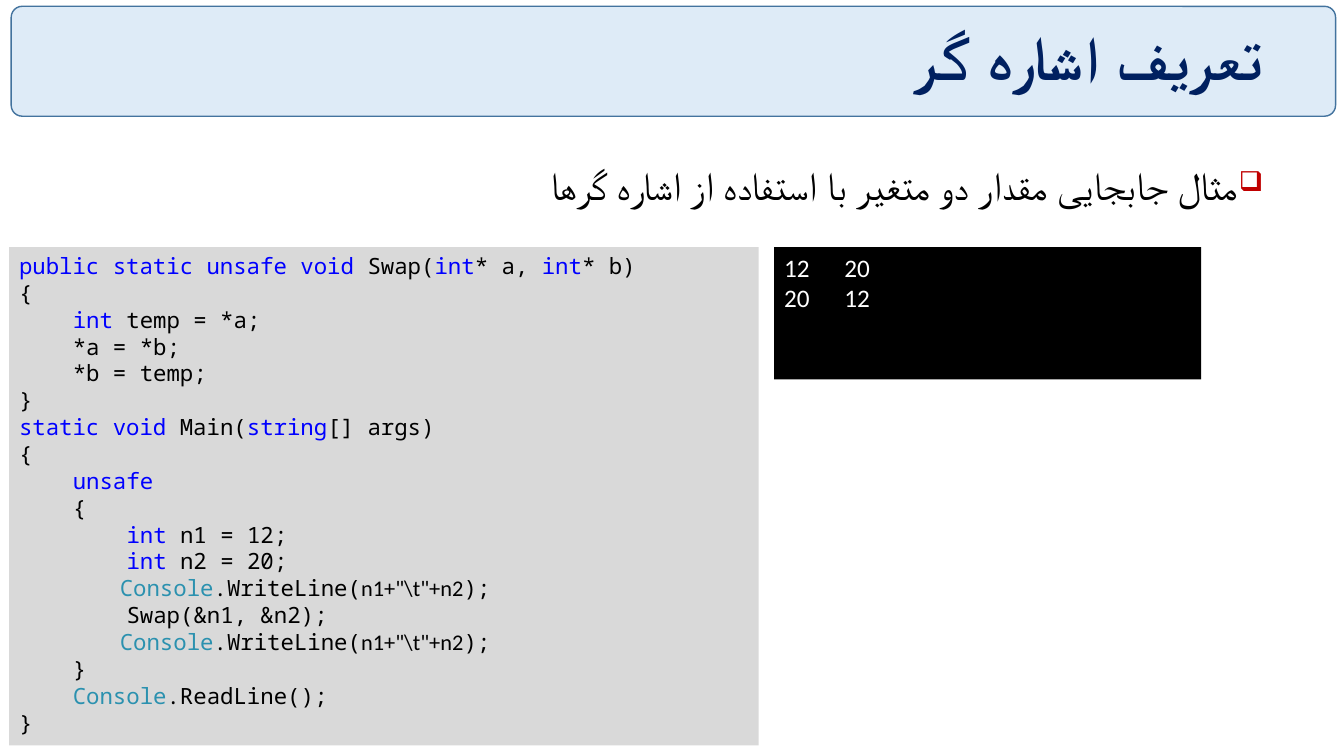
from lxml import etree
from pptx import Presentation
from pptx.dml.color import RGBColor
from pptx.enum.shapes import MSO_SHAPE
from pptx.enum.text import MSO_ANCHOR, MSO_AUTO_SIZE, PP_ALIGN
from pptx.oxml.ns import qn
from pptx.util import Pt

ROUND_RECT = MSO_SHAPE.ROUNDED_RECTANGLE
TOP, MIDDLE = MSO_ANCHOR.TOP, MSO_ANCHOR.MIDDLE
LEFT, RIGHT = PP_ALIGN.LEFT, PP_ALIGN.RIGHT
NO_FIT = MSO_AUTO_SIZE.NONE
TITLE_ONLY = 5

SANS, MONO = "Calibri", "Noto Sans Mono"
BLACK, WHITE, NAVY, RED = "000000", "FFFFFF", "002060", "C00000"
BLUE, TEAL, GREY, PALE, STEEL = "0000FF", "2B91AF", "D9D9D9", "DEEBF7", "43739E"

# Code: indent in points, then runs of text with font and colour
INDENT, TAB = 38.4, 72
PLAIN, KEYWORD, TYPE, ARGS = (MONO, BLACK), (MONO, BLUE), (MONO, TEAL), (SANS, BLACK)
WRITE_LINE = (TAB, [("Console", TYPE), (".WriteLine(", PLAIN),
                    ('n1+"\\t"+n2', ARGS), (");", PLAIN)])
CODE = [
    (0, [("public static unsafe void", KEYWORD), (" Swap(", PLAIN), ("int", KEYWORD),
         ("* a, ", PLAIN), ("int", KEYWORD), ("* b)", PLAIN)]),
    (0, [("{", PLAIN)]),
    (INDENT, [("int", KEYWORD), (" temp = *a;", PLAIN)]),
    (INDENT, [("*a = *b;", PLAIN)]),
    (INDENT, [("*b = temp;", PLAIN)]),
    (0, [("}", PLAIN)]),
    (0, [("static void", KEYWORD), (" Main(", PLAIN), ("string", KEYWORD),
         ("[] args)", PLAIN)]),
    (0, [("{", PLAIN)]),
    (INDENT, [("unsafe", KEYWORD)]),
    (INDENT, [("{", PLAIN)]),
    (2 * INDENT, [("int", KEYWORD), (" n1 = 12;", PLAIN)]),
    (2 * INDENT, [("int", KEYWORD), (" n2 = 20;", PLAIN)]),
    WRITE_LINE,
    (2 * INDENT, [("Swap(&n1, &n2);", PLAIN)]),
    WRITE_LINE,
    (INDENT, [("}", PLAIN)]),
    (INDENT, [("Console", TYPE), (".ReadLine();", PLAIN)]),
    (0, [("}", PLAIN)]),
]


def rgb(value):
    return RGBColor.from_string(value)


class SlideBuilder:
    def __init__(self, prs):
        self.s = prs.slides.add_slide(prs.slide_layouts[TITLE_ONLY])

    def style(self, font, size, color, name=SANS, bold=False):
        font.name, font.size, font.bold = name, Pt(size), bold
        font.color.rgb = rgb(color)

    def frame(self, sp, anchor):
        tf = sp.text_frame
        tf.word_wrap, tf.auto_size, tf.vertical_anchor = True, NO_FIT, anchor
        return tf

    def box(self, x, y, w, h, fill=None):
        sp = self.s.shapes.add_textbox(Pt(x), Pt(y), Pt(w), Pt(h))
        if fill:
            sp.fill.solid()
            sp.fill.fore_color.rgb = rgb(fill)
        return self.frame(sp, TOP)

    def paragraphs(self, tf, count):
        return [tf.paragraphs[0]] + [tf.add_paragraph() for _ in range(count - 1)]

    def line(self, p, text, size, color, align=LEFT, bold=False):
        p.text, p.alignment = text, align
        self.style(p.font, size, color, bold=bold)

    def rtl_line(self, p, text, size, color, spacing, bold=False):
        self.line(p, text, size, color, RIGHT, bold)
        p.line_spacing = spacing
        p._p.pPr.set("rtl", "1")

    def add_property(self, p, tag, **attributes):
        el = etree.Element(qn(tag), **attributes)
        p._p.pPr.find(qn("a:defRPr")).addprevious(el)
        return el

    def bullet(self, p, char, color, percent, indent):
        pPr = p._p.pPr
        pPr.set("marL", str(Pt(indent)))
        pPr.set("indent", str(-Pt(indent)))
        etree.SubElement(self.add_property(p, "a:buClr"), qn("a:srgbClr"), val=color)
        self.add_property(p, "a:buSzPct", val=str(percent * 1000))
        self.add_property(p, "a:buChar", char=char)

    def title(self, text, x, y, w, h):
        sp = self.s.shapes.title
        sp.left, sp.top, sp.width, sp.height = Pt(x), Pt(y), Pt(w), Pt(h)
        tf = self.frame(sp, MIDDLE)
        self.rtl_line(tf.paragraphs[0], text, 44, NAVY, 0.9, bold=True)

    def band(self, x, y, w, h):
        sp = self.s.shapes.add_shape(ROUND_RECT, Pt(x), Pt(y), Pt(w), Pt(h))
        sp.shadow.inherit = False
        sp.adjustments[0] = 0.1
        sp.fill.solid()
        sp.fill.fore_color.rgb = rgb(PALE)
        sp.line.color.rgb, sp.line.width = rgb(STEEL), Pt(1)
        self.s.shapes.title.element.addprevious(sp.element)

    def code(self, lines, x, y, w, h):
        tf = self.box(x, y, w, h, GREY)
        for p, (indent, runs) in zip(self.paragraphs(tf, len(lines)), lines):
            p._p.get_or_add_pPr().set("marL", str(Pt(indent)))
            for text, (name, color) in runs:
                r = p.add_run()
                r.text = text
                self.style(r.font, 16, color, name)

    def console(self, lines, x, y, w, h, tab):
        tf = self.box(x, y, w, h, BLACK)
        for p, text in zip(self.paragraphs(tf, len(lines)), lines):
            self.line(p, text, 18, WHITE)
            stops = self.add_property(p, "a:tabLst")
            etree.SubElement(stops, qn("a:tab"), pos=str(Pt(tab)), algn="l")


def main():
    prs = Presentation()
    prs.slide_width, prs.slide_height = Pt(960), Pt(540)
    b = SlideBuilder(prs)

    # Heading
    b.band(8, 4.5, 946, 78.5)
    b.title("تعریف اشاره گر", 17.5, 11, 892, 65)

    # Topic
    p = b.box(17.5, 95, 892, 65).paragraphs[0]
    b.rtl_line(p, "مثال جابجایی مقدار دو متغیر با استفاده از اشاره گرها", 28, BLACK, 1.5)
    p.space_before = Pt(10)
    b.bullet(p, "❑", RED, 70, 18)

    # Code and its output
    b.code(CODE, 6.5, 176.5, 535.5, 356)
    b.console(["12\t20", "20\t12"], 553, 176.5, 305, 94.5, tab=43)

    prs.save("out.pptx")


if __name__ == "__main__":
    main()
